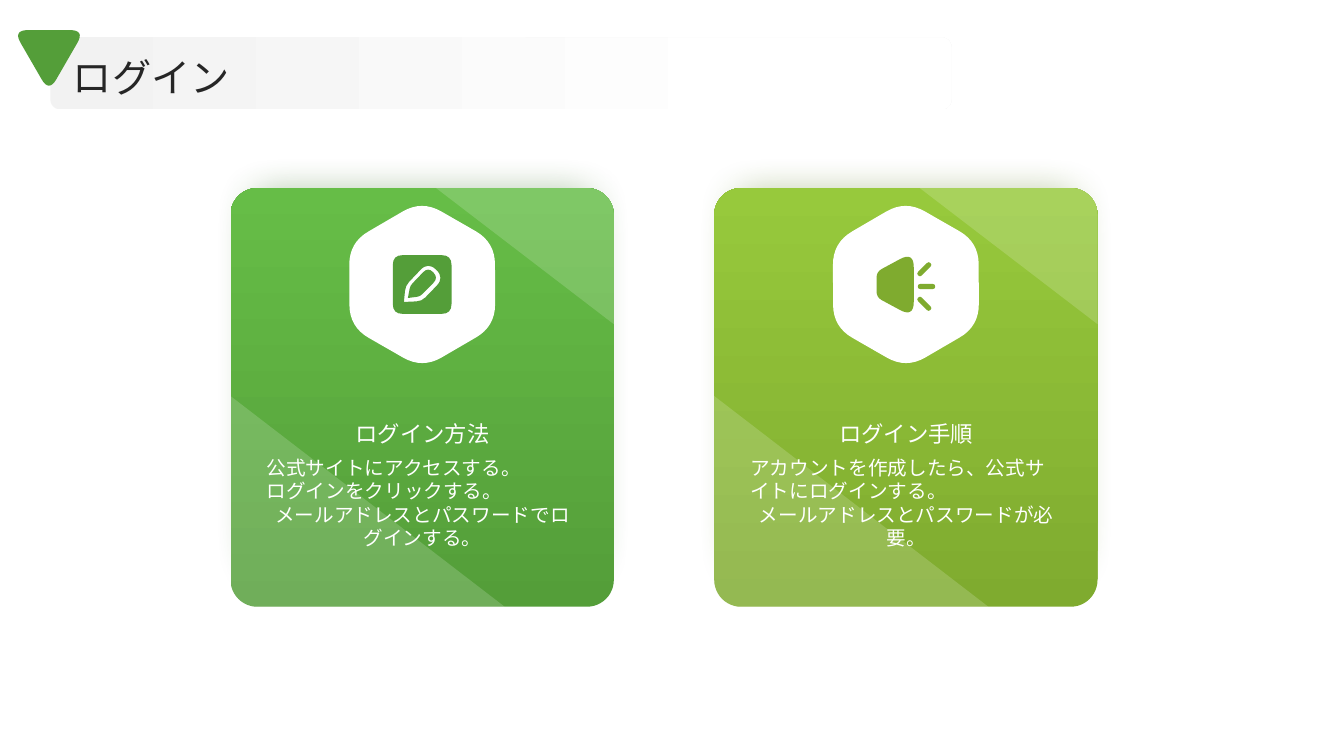
from dataclasses import dataclass
from math import cos, hypot, radians, sin

from lxml import etree
from pptx import Presentation
from pptx import util as u
from pptx.dml.color import RGBColor
from pptx.enum import shapes, text
from pptx.oxml import ns


@dataclass(frozen=True)
class Theme:
    font: str = "Cambria"
    white: str = "FFFFFF"
    ink: str = "262626"
    pale: str = "F2F2F2"
    green: tuple = ("549E39", "66BD47", "3F762B")
    lime: tuple = ("7FAB2F", "97C93C", "5F8023")
    title: int = 28
    head: int = 16
    body: int = 14


THEME = Theme()
LEFT, TOP, WIDE, HIGH, STEP = 5.81, 4.74, 9.66, 10.55, 12.19
MID, HEX = WIDE / 2, 2.43
LEAD, CENTER = text.PP_ALIGN.LEFT, text.PP_ALIGN.CENTER

PEN = [
    [(-0.74, -0.74, 0.25), (0.74, -0.74, 0.25), (0.74, 0.74, 0.25), (-0.74, 0.74, 0.25)],
    [(-0.46, 0.44, 0), (-0.42, 0.03, 0.13), (0.15, -0.57, 0.28),
     (0.56, -0.17, 0.28), (-0.01, 0.42, 0.13)],
    [(-0.36, 0.34, 0), (-0.3, 0.03, 0.08), (0.15, -0.44, 0.18),
     (0.41, -0.17, 0.18), (-0.05, 0.3, 0.08)],
]
HORN = [(0.2, -0.83, 0.4), (0.2, 0.83, 0.4), (-0.74, 0.32, 0.15), (-0.74, -0.32, 0.15)]
RAYS = [(0.31, -0.23, 0.62, -0.54), (0.3, 0.05, 0.74, 0.05), (0.31, 0.33, 0.62, 0.64)]


def ngon(count, size, cut, turn=0):
    angles = [radians(turn + 360 * k / count) for k in range(count)]
    return [(size * cos(a), size * sin(a), cut) for a in angles]


def ray(x1, y1, x2, y2, thick=0.13):
    span, half = hypot(x2 - x1, y2 - y1), thick / 2
    dx, dy = (y1 - y2) / span * half, (x2 - x1) / span * half
    ends = [(x1 + dx, y1 + dy), (x2 + dx, y2 + dy), (x2 - dx, y2 - dy), (x1 - dx, y1 - dy)]
    return [(x, y, half) for x, y in ends]


def toward(start, goal, part):
    return tuple(a + (b - a) * part for a, b in zip(start, goal))


def corners(ring):
    spots = []
    for k, (x, y, cut) in enumerate(ring):
        tip = (x, y)
        if not cut:
            spots.append(tip)
            continue
        near = [ring[k - 1][:2], ring[(k + 1) % len(ring)][:2]]
        first, last = [toward(tip, n, cut / hypot(n[0] - x, n[1] - y)) for n in near]
        spots += [first, toward(tip, toward(first, last, 0.5), 0.5), last]
    return spots


def bend(shape, rings):
    nodes = [n for n in shape._element.iter(ns.qn("a:moveTo"), ns.qn("a:lnTo"))]
    queue = iter(nodes)
    for ring in rings:
        for _, _, cut in ring:
            first = next(queue)
            if not cut:
                continue
            apex, last = next(queue), next(queue)
            a, m, b = [(int(n[0].get("x")), int(n[0].get("y"))) for n in (first, apex, last)]
            tip = toward(toward(a, b, 0.5), m, 2)
            apex.getparent().remove(apex)
            curve = etree.Element(ns.qn("a:cubicBezTo"))
            for x, y in (toward(a, tip, 2 / 3), toward(b, tip, 2 / 3), b):
                etree.SubElement(curve, ns.qn("a:pt"), x=str(round(x)), y=str(round(y)))
            last.getparent().replace(last, curve)


def paint(shape, color, alpha=None):
    shape.shadow.inherit = False
    shape.line.fill.background()
    shape.fill.solid()
    shape.fill.fore_color.rgb = RGBColor.from_string(color)
    if alpha:
        tint = shape.fill._xPr.find(".//" + ns.qn("a:srgbClr"))
        etree.SubElement(tint, ns.qn("a:alpha"), val=str(alpha * 1000))


def blend(shape, first, last, angle, end=1.0):
    shape.shadow.inherit = False
    shape.line.fill.background()
    shape.fill.gradient()
    shape.fill.gradient_angle = angle
    for stop, color, place in zip(shape.fill.gradient_stops, (first, last), (0.0, end)):
        stop.color.rgb = RGBColor.from_string(color)
        stop.position = place


def shade(shape, color):
    effects = shape._element.spPr.find(ns.qn("a:effectLst"))
    cast = etree.SubElement(
        effects, ns.qn("a:outerShdw"), blurRad=str(u.Pt(26)), dist=str(u.Pt(2)),
        dir="5400000", sx="90000", sy="90000", algn="t", rotWithShape="0")
    tint = etree.SubElement(cast, ns.qn("a:srgbClr"), val=color)
    etree.SubElement(tint, ns.qn("a:alpha"), val="43000")


def draw(tree, x, y, rings, color, alpha=None, turn=0):
    form = None
    for ring in rings:
        spots = [(u.Cm(x + px), u.Cm(y + py)) for px, py in corners(ring)]
        if form is None:
            form = tree.build_freeform(*spots[0], scale=1.0)
        else:
            form.move_to(*spots[0])
        form.add_line_segments(spots[1:], close=False)
        form._add_close()
    shape = form.convert_to_shape()
    bend(shape, rings)
    shape.rotation = turn
    paint(shape, color, alpha)


def panel(tree, x, y, wide, high, curve):
    shape = tree.add_shape(
        shapes.MSO_SHAPE.ROUNDED_RECTANGLE, u.Cm(x), u.Cm(y), u.Cm(wide), u.Cm(high))
    shape.adjustments[0] = curve
    return shape


def write(tree, x, y, wide, high, words, align, size, color, anchor, inset=True):
    frame = tree.add_textbox(u.Cm(x), u.Cm(y), u.Cm(wide), u.Cm(high)).text_frame
    frame.word_wrap = True
    frame.vertical_anchor = anchor
    if not inset:
        frame.margin_left = frame.margin_right = frame.margin_top = frame.margin_bottom = 0
    para = frame.paragraphs[0]
    para.alignment = align
    run = para.add_run()
    run.text = words
    run.font.name = THEME.font
    run.font.size = u.Pt(size)
    run.font.color.rgb = RGBColor.from_string(color)


def card(tree, x, colors, icon, head, body):
    dark, light, dim = colors
    group = tree.add_group_shape().shapes
    base = panel(group, x, TOP, WIDE, HIGH, 0.07)
    blend(base, dark, light, 90)
    shade(base, dim)
    upper = [(5.18, 0, 0), (WIDE, 0, 0.68), (WIDE, 3.43, 0)]
    lower = [(0, 5.24, 0), (6.91, HIGH, 0), (0, HIGH, 0.68)]
    for facet in (upper, lower):
        draw(group, x, TOP, [facet], THEME.white, alpha=17)
    draw(tree, x + MID, TOP + HEX, [ngon(6, 2.12, 0.56)], THEME.white, turn=29.8)
    write(tree, x + 0.66, TOP + 6.62, 8.36, 3.56, body, CENTER,
          THEME.body, THEME.white, text.MSO_ANCHOR.TOP)
    write(tree, x + 0.66, TOP + 4.81, 8.36, 1.85, head, CENTER,
          THEME.head, THEME.white, text.MSO_ANCHOR.BOTTOM)
    draw(tree, x + MID, TOP + HEX, icon, dark)


def header(tree, words):
    bar = panel(tree, 1.27, 0.94, 22.71, 1.82, 0.14)
    blend(bar, THEME.pale, THEME.white, 0, 0.8)
    write(tree, 1.84, 1.28, 29.64, 1.3, words, LEAD,
          THEME.title, THEME.ink, text.MSO_ANCHOR.MIDDLE, inset=False)
    draw(tree, 1.39, 1.37, [ngon(3, 1.04, 0.37, -90)], THEME.green[0], turn=60)


def main():
    deck = Presentation()
    deck.slide_width, deck.slide_height = u.Cm(33.87), u.Cm(19.05)
    tree = deck.slides.add_slide(deck.slide_layouts[6]).shapes
    cards = [
        (THEME.green, PEN, "ログイン方法",
         "公式サイトにアクセスする。\nログインをクリックする。\n"
         "メールアドレスとパスワードでログインする。"),
        (THEME.lime, [HORN] + [ray(*ends) for ends in RAYS], "ログイン手順",
         "アカウントを作成したら、公式サイトにログインする。\n"
         "メールアドレスとパスワードが必要。"),
    ]
    for k, parts in enumerate(cards):
        card(tree, LEFT + k * STEP, *parts)
    header(tree, "ログイン")
    deck.save("out.pptx")


if __name__ == "__main__":
    main()
